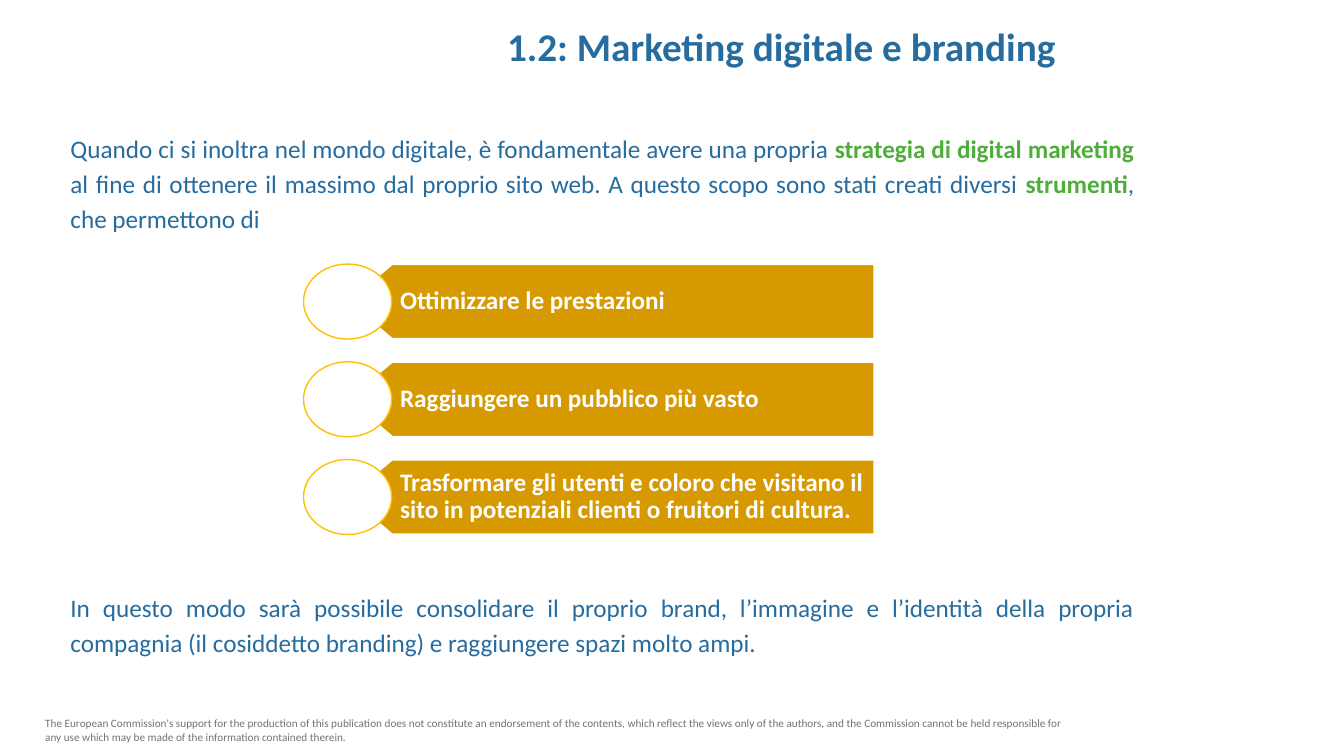
from dataclasses import dataclass

from lxml import etree
from pptx import Presentation
from pptx.dml.color import RGBColor
from pptx.enum import shapes, text
from pptx.oxml import ns
from pptx.util import Pt


@dataclass(frozen=True)
class Theme:
    font: str = "Calibri"
    blue: str = "266C9F"
    green: str = "4EAE3A"
    grey: str = "767171"
    white: str = "FFFFFF"
    bar: str = "D69900"
    ring: str = "FFC000"
    title_size: float = 28
    body_size: float = 18
    note_size: float = 8


THEME = Theme()
GOALS = [
    "Ottimizzare le prestazioni",
    "Raggiungere un pubblico più vasto",
    "Trasformare gli utenti e coloro che visitano il sito in potenziali clienti o fruitori di cultura.",
]
INTRO = [
    ("Quando ci si inoltra nel mondo digitale, è fondamentale avere una propria ", False),
    ("strategia di digital marketing ", True),
    ("al fine di ottenere il massimo dal proprio sito web. A questo scopo sono stati creati diversi ", False),
    ("strumenti", True),
    (", che permettono di", False),
]
CLOSING = [
    ("In questo modo sarà possibile consolidare il proprio brand, l’immagine e l’identità della propria "
     "compagnia (il cosiddetto branding) e raggiungere spazi molto ampi.", False),
]
NOTE = (
    "The European Commission's support for the production of this publication does not constitute an "
    "endorsement of the contents, which reflect the views only of the authors, and the Commission cannot "
    "be held responsible for any use which may be made of the information contained therein."
)


def apply(target, formats):
    for name, value in formats.items():
        setattr(target, name, value)


def place(box, left, top, width, height):
    apply(box, {"left": Pt(left), "top": Pt(top), "width": Pt(width), "height": Pt(height)})


def add_span(para, words, size, color, bold=False):
    span = para.add_run()
    span.text = words
    apply(span.font, {"name": THEME.font, "size": Pt(size), "bold": bold})
    span.font.color.rgb = RGBColor.from_string(color)


def paint(shape, fill, line, width):
    shape.shadow.inherit = False
    shape.fill.solid()
    shape.fill.fore_color.rgb = RGBColor.from_string(fill)
    shape.line.color.rgb = RGBColor.from_string(line)
    shape.line.width = Pt(width)


def set_title(page, words):
    box = page.shapes.title
    place(box, 175, 8, 766, 50)
    apply(box.text_frame, {
        "auto_size": text.MSO_AUTO_SIZE.NONE,
        "vertical_anchor": text.MSO_ANCHOR.MIDDLE,
    })
    para = box.text_frame.paragraphs[0]
    para.alignment = text.PP_ALIGN.CENTER
    add_span(para, words, THEME.title_size, THEME.blue, True)


def add_text(page, left, top, width, height):
    box = page.shapes.add_textbox(Pt(left), Pt(top), Pt(width), Pt(height))
    box.text_frame.word_wrap = True
    return box.text_frame.paragraphs[0]


def add_body(page, top, height, spans):
    para = add_text(page, 43.2, top, 774, height)
    apply(para, {"alignment": text.PP_ALIGN.JUSTIFY, "line_spacing": 1.15})
    for words, strong in spans:
        add_span(para, words, THEME.body_size, THEME.green if strong else THEME.blue, strong)


def add_goal(page, top, words):
    left, right, notch, height = 248.4, 624.6, 31.7, 53.6
    outline = page.shapes.build_freeform(Pt(right), Pt(top + height))
    outline.add_line_segments([
        (Pt(left + notch), Pt(top + height)),
        (Pt(left), Pt(top + height / 2)),
        (Pt(left + notch), Pt(top)),
        (Pt(right), Pt(top)),
    ], close=True)
    bar = outline.convert_to_shape()
    paint(bar, THEME.bar, THEME.white, 1.5)
    apply(bar.text_frame, {
        "word_wrap": True,
        "vertical_anchor": text.MSO_ANCHOR.MIDDLE,
        "margin_left": Pt(37.4),
        "margin_right": Pt(7.2),
        "margin_top": Pt(3.6),
        "margin_bottom": Pt(3.6),
    })
    para = bar.text_frame.paragraphs[0]
    apply(para, {"alignment": text.PP_ALIGN.LEFT, "line_spacing": 0.9})
    add_span(para, words, THEME.body_size, THEME.white, True)

    ring = page.shapes.add_shape(
        shapes.MSO_SHAPE.OVAL, Pt(216.8), Pt(top), Pt(63), Pt(height))
    paint(ring, THEME.white, THEME.ring, 1)


def main():
    deck = Presentation()
    apply(deck, {"slide_width": Pt(960), "slide_height": Pt(540)})
    page = deck.slides.add_slide(deck.slide_layouts[5])
    set_title(page, "1.2: Marketing digitale e branding")
    add_body(page, 88.6, 84, INTRO)
    for index, words in enumerate(GOALS):
        add_goal(page, 188.6 + 69.8 * index, words)
    add_body(page, 416.5, 59, CLOSING)
    add_span(add_text(page, 25.2, 508.3, 753, 26.6), NOTE, THEME.note_size, THEME.grey)
    deck.save("out.pptx")


if __name__ == "__main__":
    main()
